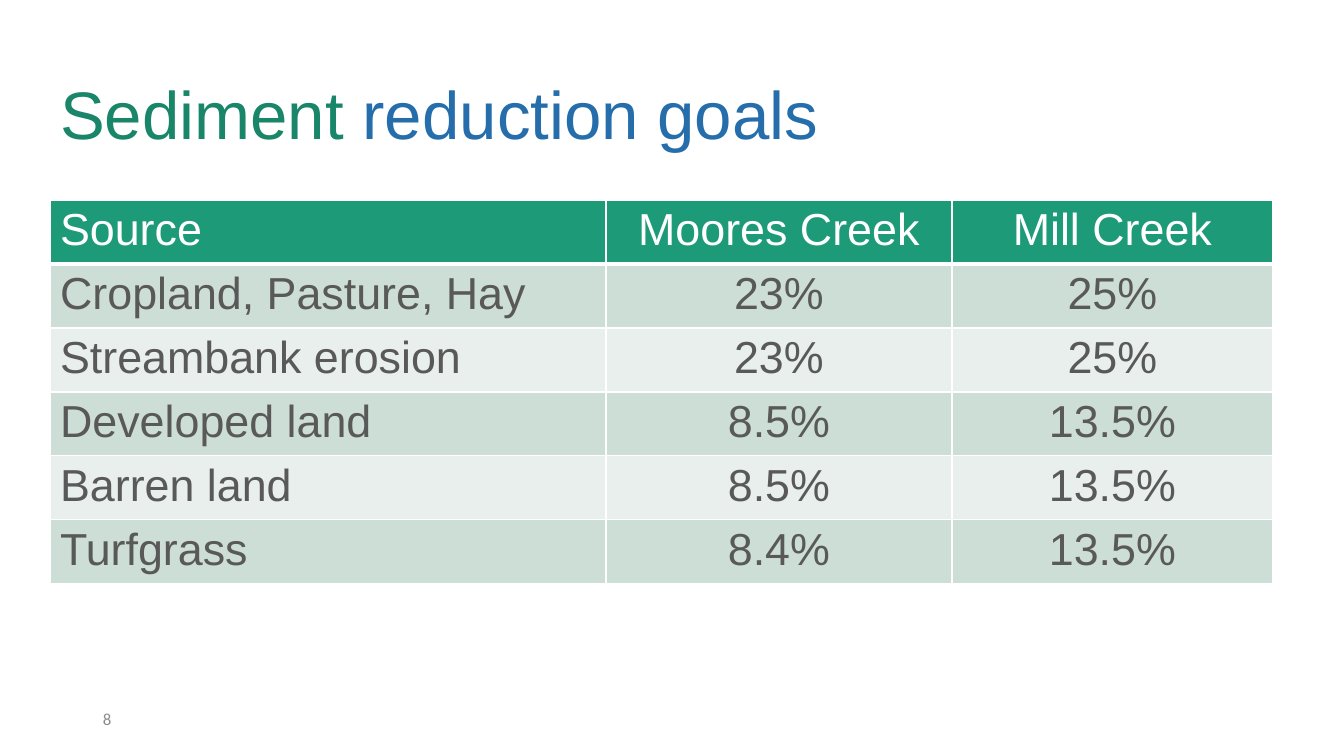
from lxml import etree
from pptx import Presentation
from pptx.dml.color import RGBColor
from pptx.enum.text import MSO_ANCHOR, MSO_AUTO_SIZE, PP_ALIGN
from pptx.oxml.ns import qn
from pptx.util import Pt

PX = 914400 / 100.8
LEFT, CENTER = PP_ALIGN.LEFT, PP_ALIGN.CENTER
MIDDLE, TOP = MSO_ANCHOR.MIDDLE, MSO_ANCHOR.TOP
NO_FIT = MSO_AUTO_SIZE.NONE

WHITE, GREEN, GRAY = "FFFFFF", "1D9A78", "595959"
BANDS = ["CDDED6", "E8EFEC"]
COLS = [556, 346, 321]
GOALS = [
    ["Source", "Moores Creek", "Mill Creek"],
    ["Cropland, Pasture, Hay", "23%", "25%"],
    ["Streambank erosion", "23%", "25%"],
    ["Developed land", "8.5%", "13.5%"],
    ["Barren land", "8.5%", "13.5%"],
    ["Turfgrass", "8.4%", "13.5%"],
]


def px(n):
    return round(n * PX)


def color(code):
    return RGBColor.from_string(code)


def add_run(para, text, size, code, face="Arial"):
    run = para.add_run()
    run.text = text
    run.font.size = Pt(size)
    run.font.bold = False
    run.font.name = face
    run.font.color.rgb = color(code)


def set_edge(cell, side, width):
    props = cell._tc.get_or_add_tcPr()
    line = etree.SubElement(props, qn("a:ln" + side), w=str(Pt(width)))
    fill = etree.SubElement(line, qn("a:solidFill"))
    etree.SubElement(fill, qn("a:srgbClr"), val=WHITE)


# Title in two colors
def add_title(slide, x, y, w, h):
    title = slide.shapes.title
    title.left, title.top, title.width, title.height = map(px, (x, y, w, h))
    frame = title.text_frame
    frame.auto_size = NO_FIT
    frame.vertical_anchor = MIDDLE
    para = frame.paragraphs[0]
    para.alignment = LEFT
    para.line_spacing = 1.1
    add_run(para, "Sediment ", 48, "198569")
    add_run(para, "reduction goals", 48, "256EAB")


# Table of goals: header row, then banded rows
def add_goals(slide, x, y, row_h):
    box = map(px, (x, y, sum(COLS), row_h * len(GOALS)))
    table = slide.shapes.add_table(len(GOALS), len(COLS), *box).table
    for col, width in zip(table.columns, COLS):
        col.width = px(width)
    for i, row in enumerate(GOALS):
        table.rows[i].height = px(row_h)
        for j, text in enumerate(row):
            cell = table.cell(i, j)
            thick = {"T": 3 if i == 1 else 1, "B": 3 if i == 0 else 1}
            for side in "LRTB":
                set_edge(cell, side, thick.get(side, 1))
            cell.fill.solid()
            cell.fill.fore_color.rgb = color(BANDS[(i - 1) % 2] if i else GREEN)
            cell.vertical_anchor = TOP
            para = cell.text_frame.paragraphs[0]
            para.alignment = CENTER if j else LEFT
            add_run(para, text, 32, GRAY if i else WHITE)


# Page number
def add_page(slide, x, y, w, h):
    frame = slide.shapes.add_textbox(*map(px, (x, y, w, h))).text_frame
    frame.word_wrap = True
    frame.vertical_anchor = MIDDLE
    add_run(frame.paragraphs[0], "8", 12, "8C8C8C", "Calibri")


def main():
    deck = Presentation()
    deck.slide_width, deck.slide_height = px(1344), px(756)
    slide = deck.slides.add_slide(deck.slide_layouts[5])
    add_title(slide, 50, 36, 1159, 146)
    add_goals(slide, 50, 200, 64)
    add_page(slide, 93, 696, 1159, 45)
    deck.save("out.pptx")


if __name__ == "__main__":
    main()
